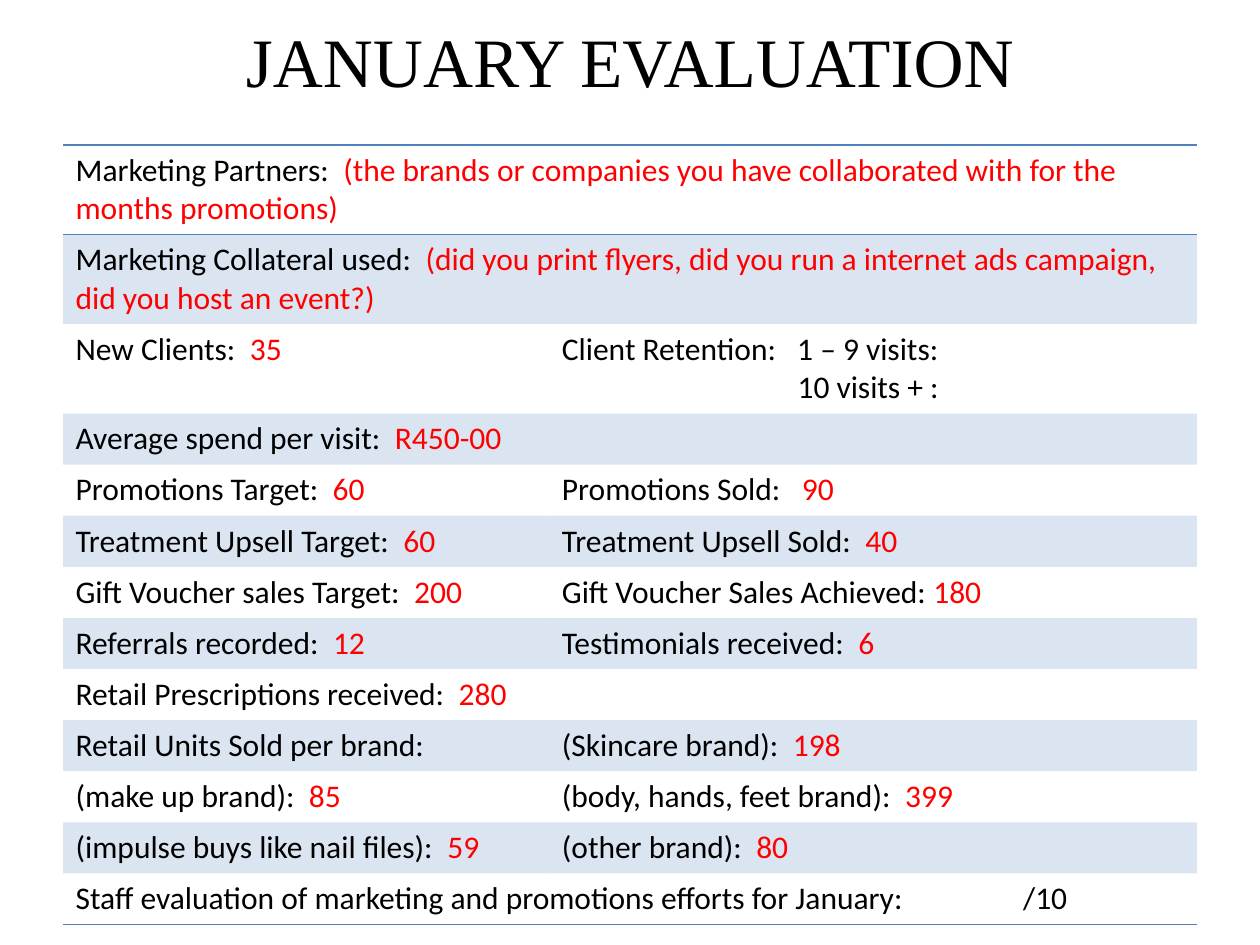
from lxml import etree
from pptx import Presentation
from pptx import util as u
from pptx.dml.color import RGBColor
from pptx.enum import text
from pptx.oxml.ns import qn

COLORS = {"ink": "000000", "answer": "FF0000", "accent": "4F81BD"}
NO_GRID_STYLE = "{2D5ABB26-0587-4C30-8999-92F81FD0307C}"


def add_text(paragraph, content, size=18, font="Calibri", color="ink"):
    run = paragraph.add_run()
    run.text = content
    run.font.size = u.Pt(size)
    run.font.name = font
    run.font.color.rgb = RGBColor.from_string(COLORS[color])


def add_border(cell, side):
    line = etree.SubElement(cell._tc.get_or_add_tcPr(), qn(f"a:{side}"), w=str(u.Pt(1)))
    solid = etree.SubElement(line, qn("a:solidFill"))
    etree.SubElement(solid, qn("a:srgbClr"), val=COLORS["accent"])


presentation = Presentation()
presentation.slide_width = u.Inches(10)
presentation.slide_height = u.Inches(7.5)
slide = presentation.slides.add_slide(presentation.slide_layouts[5])

title = slide.shapes.title
title.left, title.top = u.Inches(0.5), u.Inches(0.13)
title.width, title.height = u.Inches(9), u.Inches(0.69)
title.text_frame.vertical_anchor = text.MSO_ANCHOR.MIDDLE
title_paragraph = title.text_frame.paragraphs[0]
title_paragraph.alignment = text.PP_ALIGN.CENTER
add_text(title_paragraph, "JANUARY EVALUATION", size=39.6, font="Times New Roman")

FULL, PAIR, OPEN = "full", "pair", "open"
rows = [
    (FULL, [("Marketing Partners:  ", "(the brands or companies you have collaborated with for the months promotions)")]),
    (FULL, [("Marketing Collateral used:  ", "(did you print flyers, did you run a internet ads campaign, did you host an event?)")]),
    (PAIR, [("New Clients:  ", "35"), ("Client Retention:   1 – 9 visits:", "")]),
    (OPEN, [("Average spend per visit:  ", "R450-00")]),
    (PAIR, [("Promotions Target:  ", "60"), ("Promotions Sold:   ", "90")]),
    (PAIR, [("Treatment Upsell Target:  ", "60"), ("Treatment Upsell Sold:  ", "40")]),
    (PAIR, [("Gift Voucher sales Target:  ", "200"), ("Gift Voucher Sales Achieved: ", "180")]),
    (PAIR, [("Referrals recorded:  ", "12"), ("Testimonials received:  ", "6")]),
    (OPEN, [("Retail Prescriptions received:  ", "280")]),
    (PAIR, [("Retail Units Sold per brand:", ""), ("(Skincare brand):  ", "198")]),
    (PAIR, [("(make up brand):  ", "85"), ("(body, hands, feet brand):  ", "399")]),
    (PAIR, [("(impulse buys like nail files):  ", "59"), ("(other brand):  ", "80")]),
    (FULL, [("Staff evaluation of marketing and promotions efforts for January:", "")]),
]
widths = [3.86] + [1.285] * 4
row_height = 0.405
last_row = len(rows) - 1

table = slide.shapes.add_table(
    len(rows), len(widths), u.Inches(0.5), u.Inches(1.15), u.Inches(9), u.Inches(row_height * len(rows))
).table
table.first_row = False
table.horz_banding = False
table._tbl.tblPr.find(qn("a:tableStyleId")).text = NO_GRID_STYLE
for column, width in zip(table.columns, widths):
    column.width = u.Inches(width)

for row_index, (layout, entries) in enumerate(rows):
    table.rows[row_index].height = u.Inches(row_height)
    if layout != OPEN:
        first_column = 0 if layout == FULL else 1
        table.cell(row_index, first_column).merge(table.cell(row_index, len(widths) - 1))

    for column_index, (label, answer) in enumerate(entries):
        paragraph = table.cell(row_index, column_index).text_frame.paragraphs[0]
        add_text(paragraph, label)
        if answer:
            add_text(paragraph, answer, color="answer")

    for column_index in range(len(widths)):
        cell = table.cell(row_index, column_index)
        if row_index == 0:
            add_border(cell, "lnT")
        if row_index in (0, last_row):
            add_border(cell, "lnB")
        if row_index % 2:
            cell.fill.solid()
            cell.fill.fore_color.rgb = RGBColor.from_string(COLORS["accent"])
            fill_color = cell._tc.tcPr.find(qn("a:solidFill")).find(qn("a:srgbClr"))
            etree.SubElement(fill_color, qn("a:alpha"), val="20000")
        else:
            cell.fill.background()

visits = table.cell(2, 1).text_frame.add_paragraph()
visits._p.get_or_add_pPr().set("marL", str(u.Inches(1.87)))
add_text(visits, "10 visits + :")

score = table.cell(last_row, 0).text_frame.paragraphs[0]
tabs = etree.SubElement(score._p.get_or_add_pPr(), qn("a:tabLst"))
etree.SubElement(tabs, qn("a:tab"), pos=str(u.Inches(7.52)), algn="l")
add_text(score, "\t/10")

presentation.save("out.pptx")
